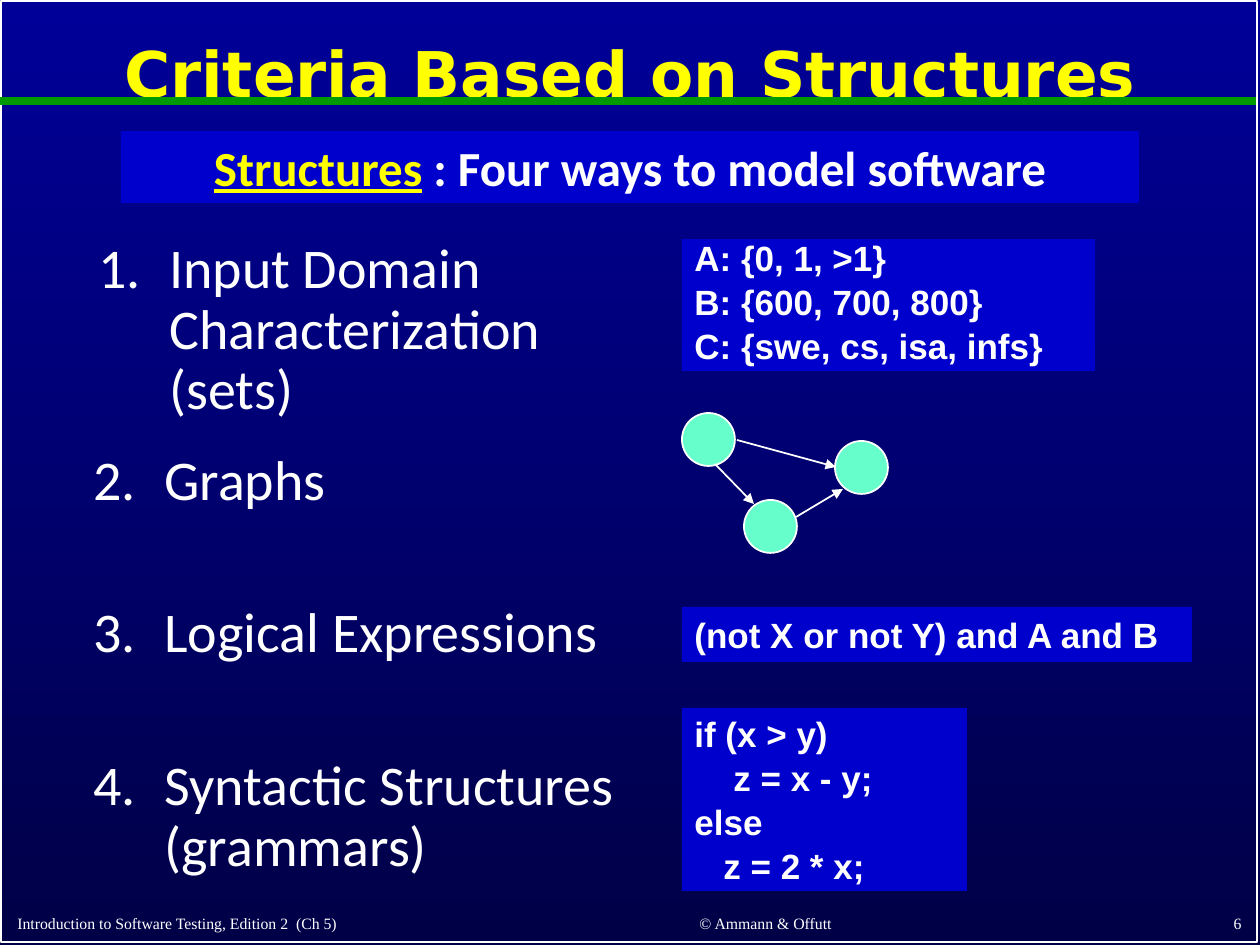
from lxml import etree
from pptx import Presentation
from pptx import util as u
from pptx.dml.color import RGBColor
from pptx.enum import shapes, text
from pptx.oxml import ns

HUES = {
    "top": "000099", "base": "000047", "box": "0000CC", "node": "66FFCC",
    "rule": "009900", "head": "FFFF00", "ink": "FFFFFF",
}
LEFT, MID, RIGHT = text.PP_ALIGN.LEFT, text.PP_ALIGN.CENTER, text.PP_ALIGN.RIGHT
CENTRE, LOW = text.MSO_ANCHOR.MIDDLE, text.MSO_ANCHOR.BOTTOM
SANS = {"font": "Arial", "size": 20, "bold": True}


def px(n):
    """Turn pixels into EMU."""
    return u.Emu(round(n * 914400 / 126))


def hue(name):
    """Look up a colour."""
    return RGBColor.from_string(HUES[name])


def add(node, tag, **attrs):
    """Append a drawing element with attributes."""
    return etree.SubElement(node, ns.qn(tag), attrs)


def write(shape, lines, font="Calibri", size=28, bold=False, align=LEFT,
          anchor=text.MSO_ANCHOR.TOP, lead=None, gap=0, wrap=True):
    """Fill a shape with lines, each an indent and its (text, colour, underline) runs."""
    frame = shape.text_frame
    frame.word_wrap = wrap
    frame.auto_size = text.MSO_AUTO_SIZE.NONE
    frame.vertical_anchor = anchor
    for i, (indent, runs) in enumerate(lines):
        para = frame.add_paragraph() if i else frame.paragraphs[0]
        para.alignment = align
        para.line_spacing = lead
        para.space_before = u.Pt(gap if i else 0)
        if indent:
            para._p.get_or_add_pPr().set("marL", str(px(indent)))
        for words, ink, under in runs:
            run = para.add_run()
            run.text = words
            run.font.name, run.font.size = font, u.Pt(size)
            run.font.bold, run.font.underline = bold, under
            run.font.color.rgb = hue(ink)


def plain(*lines):
    """Make white lines without indent."""
    return [(0, [(line, "ink", False)]) for line in lines]


def form(slide, kind, x, y, w, h, fill=None, line=None):
    """Draw a preset shape."""
    shape = slide.shapes.add_shape(kind, px(x), px(y), px(w), px(h))
    shape.shadow.inherit = False
    if fill:
        shape.fill.solid()
        shape.fill.fore_color.rgb = hue(fill)
    else:
        shape.fill.background()
    if line:
        shape.line.color.rgb = hue(line)
        shape.line.width = u.Pt(1)
    else:
        shape.line.fill.background()
    return shape


def box(slide, x, y, w, h, lines, **style):
    """Draw a blue box with text."""
    write(form(slide, shapes.MSO_SHAPE.RECTANGLE, x, y, w, h, "box"), lines, **style)


def label(slide, x, y, w, h, words, **style):
    """Place a text box."""
    shape = slide.shapes.add_textbox(px(x), px(y), px(w), px(h))
    write(shape, plain(words), **style)
    return shape


def item(slide, num, x, y, h, words):
    """Place one numbered item."""
    shape = label(slide, x, y, 553, h, words, size=32, anchor=CENTRE, lead=0.9)
    props = shape.text_frame.paragraphs[0]._p.get_or_add_pPr()
    props.set("marL", str(px(71)))
    props.set("indent", str(-px(71)))
    add(add(props, "a:buClr"), "a:srgbClr", val=HUES["ink"])
    add(props, "a:buFont", typeface="+mj-lt")
    add(props, "a:buAutoNum", type="arabicPeriod", startAt=str(num))


def link(slide, x1, y1, x2, y2, ink="ink", width=1, arrow=True):
    """Draw a straight line, with an arrowhead if wanted."""
    line = slide.shapes.add_connector(
        shapes.MSO_CONNECTOR.STRAIGHT, px(x1), px(y1), px(x2), px(y2))
    line.line.color.rgb = hue(ink)
    line.line.width = u.Pt(width)
    if arrow:
        add(line.line._get_or_add_ln(), "a:tailEnd", type="triangle")
    add(line._element.spPr, "a:effectLst")


def paint(slide):
    """Set the background gradient."""
    fill = slide.background.fill
    fill.gradient()
    fill.gradient_angle = 270
    for stop, name in zip(fill.gradient_stops, ("top", "base")):
        stop.color.rgb = hue(name)


def graph(slide):
    """Draw three nodes and their edges."""
    for x, y in ((682, 413), (835, 441), (744, 500)):
        form(slide, shapes.MSO_SHAPE.OVAL, x, y, 53, 53, "node", "ink")
    for ends in ((737, 440, 836, 467), (715, 464, 754, 504), (796, 517, 843, 489)):
        link(slide, *ends)


def main():
    """Build the slide."""
    deck = Presentation()
    deck.slide_width, deck.slide_height = px(1260), px(945)
    slide = deck.slides.add_slide(deck.slide_layouts[5])
    paint(slide)
    form(slide, shapes.MSO_SHAPE.RECTANGLE, 1, 1, 1256, 941, line="ink")
    link(slide, 0, 101, 1256, 101, "rule", 4.5, False)

    title = slide.shapes.title
    title.left, title.top, title.width, title.height = map(px, (6, 14, 1248, 126))
    write(title, [(0, [("Criteria Based on Structures", "head", False)])],
          font="DejaVu Sans", size=36, bold=True, align=MID, anchor=CENTRE, lead=0.9)

    for x, w, words, align in (
            (5, 529, "Introduction to Software Testing, Edition 2  (Ch 5)", LEFT),
            (566, 399, "© Ammann & Offutt", MID),
            (992, 262, "6", RIGHT)):
        label(slide, x, 904, w, 35, words, font="Times New Roman", size=9,
              align=align, anchor=LOW)

    box(slide, 121, 131, 1018, 72,
        [(0, [("Structures", "head", True),
              (" : Four ways to model software", "ink", False)])],
        bold=True, align=MID)

    for num, spot in enumerate((
            (86, 239, 184, "Input Domain Characterization (sets)"),
            (81, 442, 81, "Graphs"),
            (81, 583, 102, "Logical Expressions"),
            (81, 745, 146, "Syntactic Structures (grammars)")), 1):
        item(slide, num, *spot)

    code = {**SANS, "anchor": LOW, "lead": 0.6, "gap": 10.8}
    box(slide, 682, 239, 413, 132,
        plain("A: {0, 1, >1}", "B: {600, 700, 800}", "C: {swe, cs, isa, infs}"), **code)
    graph(slide)
    box(slide, 682, 607, 510, 55, plain("(not X or not Y) and A and B"), **SANS)
    steps = ((0, "if (x > y)"), (39, "z = x - y;"), (0, "else"), (29, "z = 2 * x;"))
    box(slide, 682, 708, 285, 183,
        [(indent, [(words, "ink", False)]) for indent, words in steps], **code)
    deck.save("out.pptx")


if __name__ == "__main__":
    main()
